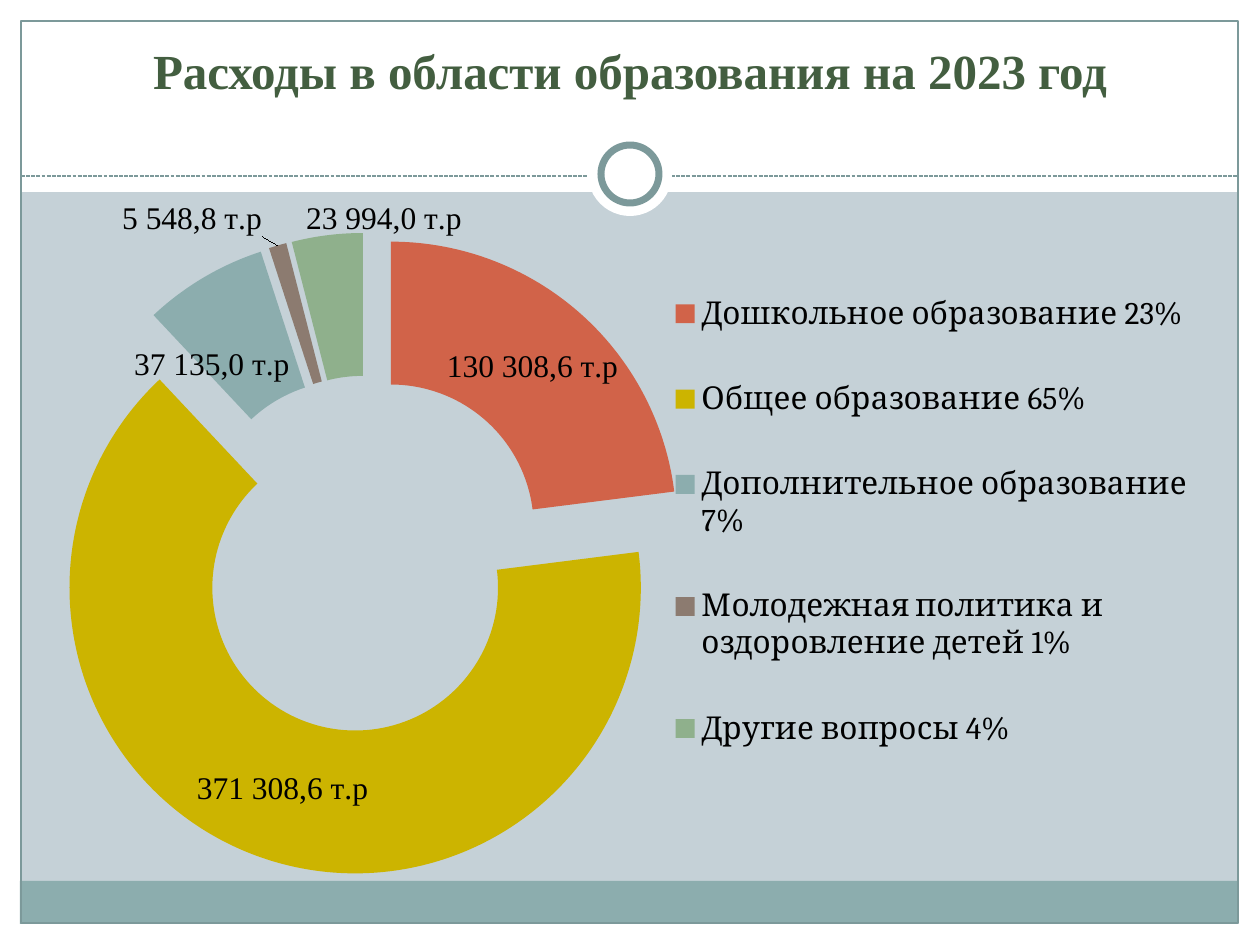
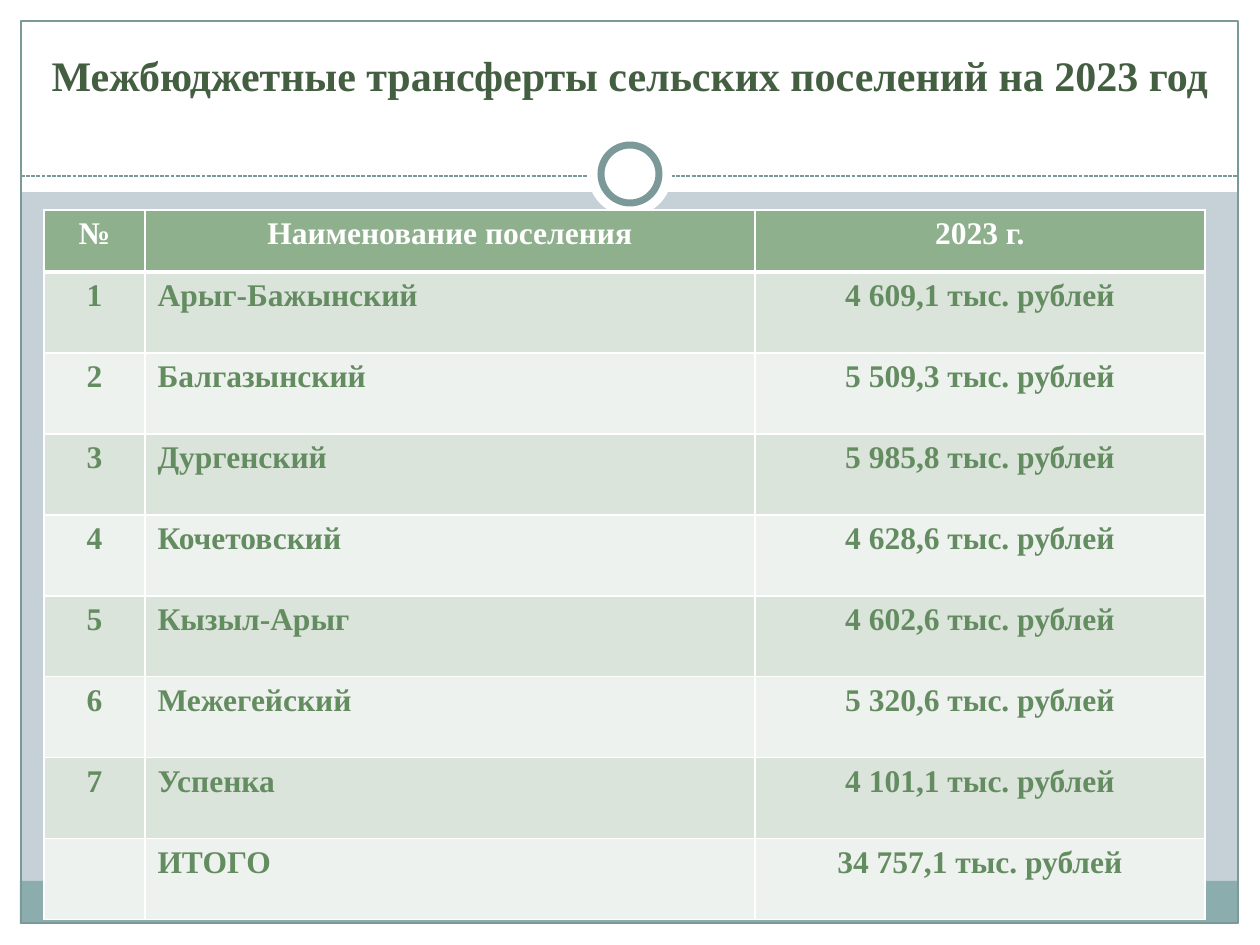
from lxml.etree import SubElement
from pptx import Presentation
from pptx.chart.data import CategoryChartData
from pptx.dml.color import RGBColor
from pptx.enum.chart import XL_CHART_TYPE as ChartType, XL_LEGEND_POSITION as LegendPosition
from pptx.enum.dml import MSO_LINE as LineDash
from pptx.enum.shapes import MSO_CONNECTOR as Connector, MSO_SHAPE as Shape
from pptx.enum.text import MSO_ANCHOR as Anchor, PP_ALIGN as Align
from pptx.oxml import parse_xml
from pptx.oxml.ns import nsdecls, qn
from pptx.util import Inches, Pt

PX = 914400 // 126
rgb = RGBColor.from_string

WHITE, BLACK = "FFFFFF", "000000"
BACKGROUND, FRAME = "C5D1D7", "7C999A"
TEAL, GREEN = "8CADAE", "8FB08C"
TITLE_GREEN, TEXT_GREEN = "435E40", "648C61"
ROW_FILLS = ["DBE4DA", "EEF2EE"]
SERIF, LEGEND_FONT = "Times New Roman", "Cambria"


def add_block(slide, kind, box, fill=None, line_width=None):
    shape = slide.shapes.add_shape(kind, *[length * PX for length in box])
    shape.shadow.inherit = False
    if fill:
        shape.fill.solid()
        shape.fill.fore_color.rgb = rgb(fill)
    else:
        shape.fill.background()
    if line_width:
        shape.line.color.rgb = rgb(FRAME)
        shape.line.width = Pt(line_width)
    else:
        shape.line.fill.background()


def set_layout(element, index, settings):
    """Give a chart part a manual layout as its child number index."""
    for old_layout in element.findall(qn("c:layout")):
        element.remove(old_layout)
    layout = parse_xml(f"<c:layout {nsdecls('c')}><c:manualLayout/></c:layout>")
    for name, value in settings.items():
        SubElement(layout[0], qn(f"c:{name}")).set("val", str(value))
    element.insert(index, layout)


presentation = Presentation()
presentation.slide_width = Inches(10)
presentation.slide_height = Inches(7.5)

# Shared frame and titles
titles = [
    ("Расходы в области образования на 2023 год", 28, 42),
    ("Межбюджетные трансферты сельских поселений на 2023 год", 24, 15),
]
margins = [(0, 924, 1260, 21), (0, 0, 1260, 192), (0, 0, 21, 945), (1239, 0, 21, 945)]

for title, size, left in titles:
    slide = presentation.slides.add_slide(presentation.slide_layouts[6])
    slide.background.fill.solid()
    slide.background.fill.fore_color.rgb = rgb(BACKGROUND)

    for margin in margins:
        add_block(slide, Shape.RECTANGLE, margin, WHITE)
    add_block(slide, Shape.RECTANGLE, (20, 881, 1217, 43), TEAL)
    add_block(slide, Shape.RECTANGLE, (21, 21, 1217, 902), line_width=0.75)

    divider = slide.shapes.add_connector(
        Connector.STRAIGHT, 21 * PX, 176 * PX, 1239 * PX, 176 * PX)
    divider.line.color.rgb = rgb(FRAME)
    divider.line.width = Pt(0.75)
    divider.line.dash_style = LineDash.SQUARE_DOT
    SubElement(divider._element.spPr, qn("a:effectLst"))

    add_block(slide, Shape.OVAL, (588, 132, 84, 84), WHITE)
    add_block(slide, Shape.OVAL, (601, 145, 58, 58), WHITE, 4)

    title_box = slide.shapes.add_textbox(
        left * PX, 32 * PX, (1260 - 2 * left) * PX, 74 * PX)
    title_box.text_frame.word_wrap = True
    title_box.text_frame.vertical_anchor = Anchor.BOTTOM
    paragraph = title_box.text_frame.paragraphs[0]
    paragraph.alignment = Align.CENTER
    run = paragraph.add_run()
    run.text = title
    run.font.size, run.font.name, run.font.bold = Pt(size), SERIF, True
    run.font.color.rgb = rgb(TITLE_GREEN)

education_slide, transfers_slide = presentation.slides

# Education spending: category, share, colour, label, label shift in px
CHART_WIDTH, CHART_HEIGHT = 1172, 784
spending = [
    ("Дошкольное образование 23%", 23, "D16349", "130 308,6 т.р", None),
    ("Общее образование 65%", 65, "CCB400", "371 308,6 т.р", None),
    ("Дополнительное образование 7%", 7, TEAL, "37 135,0 т.р", (-28, 26)),
    ("Молодежная политика и оздоровление детей 1%", 1, "8C7B70", "5 548,8 т.р", (-106, -95)),
    ("Другие вопросы 4%", 4, GREEN, "23 994,0 т.р", (48, -87)),
]
chart_data = CategoryChartData()
chart_data.categories = [row[0] for row in spending]
chart_data.add_series("Series 1", [row[1] for row in spending])
chart = education_slide.shapes.add_chart(
    ChartType.DOUGHNUT_EXPLODED, 35 * PX, 145 * PX,
    CHART_WIDTH * PX, CHART_HEIGHT * PX, chart_data).chart
chart.has_title = False
chart.font.size, chart.font.name = Pt(18), LEGEND_FONT
chart.font.color.rgb = rgb(BLACK)
chart._chartSpace.find(qn("c:txPr")).addprevious(
    parse_xml(f"<c:spPr {nsdecls('c', 'a')}><a:noFill/><a:ln><a:noFill/></a:ln></c:spPr>"))

chart.has_legend = True
chart.legend.position = LegendPosition.RIGHT
chart.legend.include_in_layout = False
edges = {"xMode": "edge", "yMode": "edge"}
set_layout(chart.legend._element, 1, edges | {"x": 0.54, "y": 0.13, "w": 0.45, "h": 0.7})
set_layout(chart._chartSpace.chart.plotArea, 0, {"layoutTarget": "inner"} | edges | {
    "x": 0.009, "y": 0.112, "w": 0.549, "h": 0.82})

plot = chart.plots[0]
plot.vary_by_categories = True
series = plot.series[0]
for explosion in series._element.findall(qn("c:explosion")):
    series._element.remove(explosion)
series._element.find(qn("c:tx")).addnext(
    parse_xml(f'<c:explosion {nsdecls("c")} val="25"/>'))

for index, (category, share, colour, label, shift) in enumerate(spending):
    point = series.points[index]
    point.format.fill.solid()
    point.format.fill.fore_color.rgb = rgb(colour)
    point.format.line.fill.background()
    run = point.data_label.text_frame.paragraphs[0].add_run()
    run.text = label
    run.font.size, run.font.name = Pt(18), SERIF
    run.font.color.rgb = rgb(BLACK)
    if shift:
        label_element = series._element.find(qn("c:dLbls")).findall(qn("c:dLbl"))[index]
        set_layout(label_element, 1, {
            "x": round(shift[0] / CHART_WIDTH, 3), "y": round(shift[1] / CHART_HEIGHT, 3)})

# Transfers to rural settlements
settlements = [
    ("Арыг-Бажынский", "4 609,1"),
    ("Балгазынский", "5 509,3"),
    ("Дургенский", "5 985,8"),
    ("Кочетовский", "4 628,6"),
    ("Кызыл-Арыг", "4 602,6"),
    ("Межегейский", "5 320,6"),
    ("Успенка", "4 101,1"),
]
rows = [("№", "Наименование поселения", "2023 г.")]
for number, (settlement, amount) in enumerate(settlements, 1):
    rows.append((str(number), settlement, f"{amount} тыс. рублей"))
rows.append(("", "ИТОГО", "34 757,1 тыс. рублей"))

column_widths = [101, 610, 450]
row_heights = [62] + [81] * (len(rows) - 1)
table = transfers_slide.shapes.add_table(
    len(rows), len(column_widths), 44 * PX, 210 * PX,
    sum(column_widths) * PX, sum(row_heights) * PX).table
table.first_row = table.horz_banding = False
for column, width in zip(table.columns, column_widths):
    column.width = width * PX

for row_index, texts in enumerate(rows):
    is_header = row_index == 0
    table.rows[row_index].height = row_heights[row_index] * PX
    for column_index, text in enumerate(texts):
        cell = table.cell(row_index, column_index)
        properties = cell._tc.get_or_add_tcPr()
        for side in "LRTB":
            thick = (is_header and side == "B") or (row_index == 1 and side == "T")
            properties.append(parse_xml(
                f'<a:ln{side} {nsdecls("a")} w="{Pt(3 if thick else 1)}"><a:solidFill>'
                f'<a:srgbClr val="{WHITE}"/></a:solidFill></a:ln{side}>'))
        cell.fill.solid()
        cell.fill.fore_color.rgb = rgb(GREEN if is_header else ROW_FILLS[(row_index - 1) % 2])
        if not text:
            continue
        paragraph = cell.text_frame.paragraphs[0]
        paragraph.alignment = Align.CENTER if is_header or column_index != 1 else Align.LEFT
        run = paragraph.add_run()
        run.text = text
        run.font.size, run.font.name, run.font.bold = Pt(18), SERIF, True
        run.font.color.rgb = rgb(WHITE if is_header else TEXT_GREEN)

presentation.save("out.pptx")
